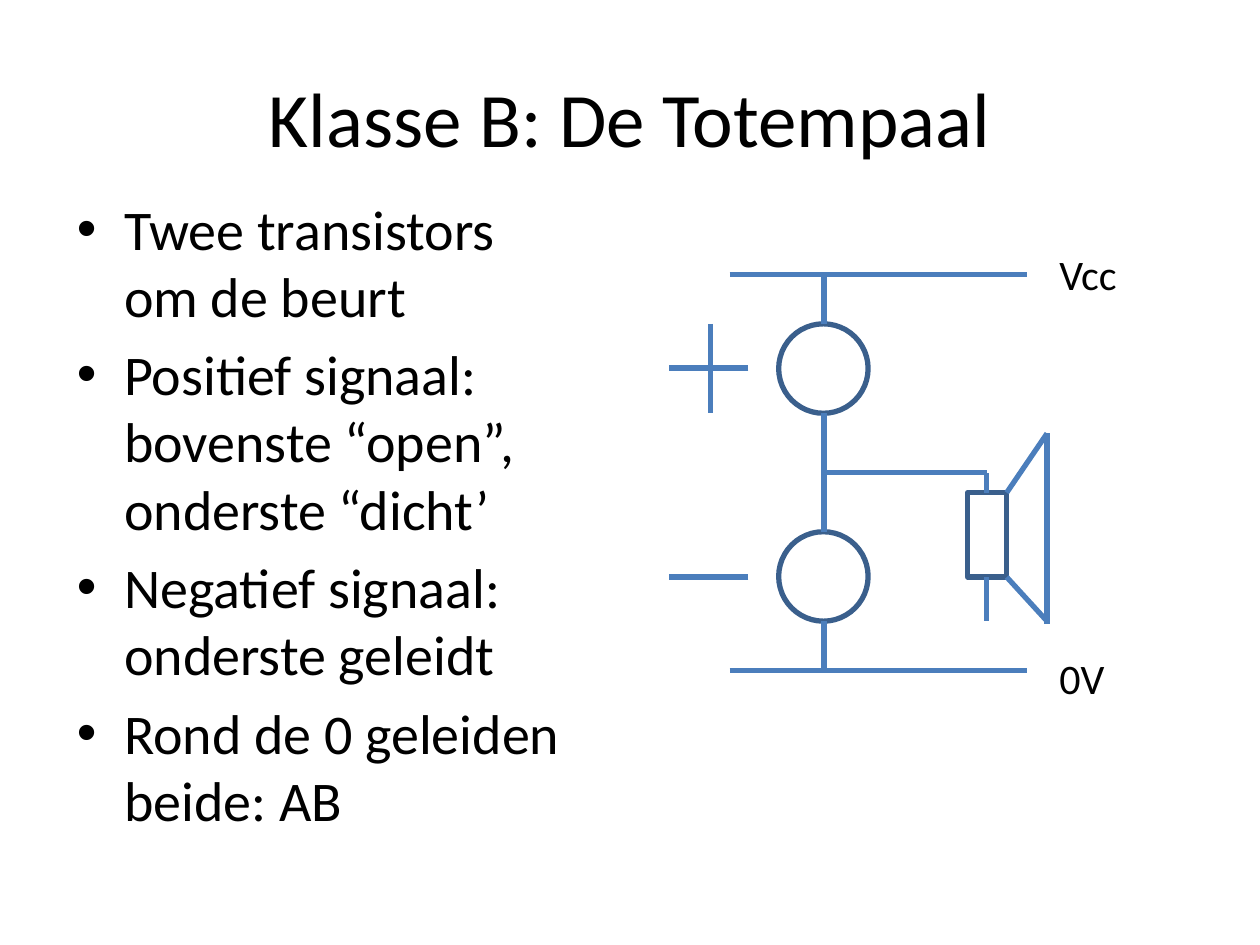
from typing import NamedTuple

from lxml.etree import SubElement
from pptx import Presentation
from pptx.dml.color import RGBColor as RGB
from pptx.enum.shapes import MSO_CONNECTOR as Conn, MSO_SHAPE as Kind
from pptx.enum.text import MSO_ANCHOR as Anchor, MSO_AUTO_SIZE as Auto, PP_ALIGN as Align
from pptx.oxml.ns import qn
from pptx.util import Inches, Pt

FONT = "Calibri"
COLORS = {"text": "000000", "wire": "4B7EBC", "part": "3A5F8C"}


class Wire(NamedTuple):
    x1: float
    y1: float
    x2: float
    y2: float


class Part(NamedTuple):
    kind: Kind
    left: float
    top: float
    width: float
    height: float


class Label(NamedTuple):
    text: str
    top: float


def color(name: str) -> RGB:
    return RGB.from_string(COLORS[name])


def place(shape, left: float, top: float, width: float, height: float) -> None:
    shape.left, shape.top = Inches(left), Inches(top)
    shape.width, shape.height = Inches(width), Inches(height)


def write(para, text: str, size: int) -> None:
    for i, line in enumerate(text.split("\n")):
        if i:
            para.add_line_break()
        run = para.add_run()
        run.text = line
        run.font.name, run.font.size = FONT, Pt(size)
        run.font.color.rgb = color("text")


def draw_wire(shapes, wire: Wire) -> None:
    line = shapes.add_connector(Conn.STRAIGHT, *map(Inches, wire))
    line.line.color.rgb = color("wire")
    line.line.width = Pt(3)
    SubElement(line._element.spPr, qn("a:effectLst"))


def draw_part(shapes, part: Part) -> None:
    shape = shapes.add_shape(part.kind, *map(Inches, part[1:]))
    shape.shadow.inherit = False
    shape.fill.background()
    shape.line.color.rgb = color("part")
    shape.line.width = Pt(3)


def draw_label(shapes, label: Label) -> None:
    box = shapes.add_textbox(*map(Inches, (8.31, label.top, 0.79, 0.5)))
    box.text_frame.word_wrap = True
    write(box.text_frame.paragraphs[0], label.text, 24)


# Circuit levels: supply rails, transistors, output node and speaker
VCC, GND = 2.18, 5.32
MID, AXIS = 3.75, 6.54
DIA = 0.71
TOP, LOW = 2.57, 4.22
COIL = Part(Kind.RECTANGLE, 7.68, 3.91, 0.31, 0.67)
SIDE, PIN, CONE = 7.99, 7.83, 8.31
BASE, FOOT = 4.58, 4.93

PARTS = [Part(Kind.OVAL, 6.18, y, DIA, DIA) for y in (TOP, LOW)] + [COIL]
WIRES = [
    # Supply rails
    *(Wire(5.79, y, 8.15, y) for y in (VCC, GND)),
    # Totem pole
    Wire(AXIS, VCC, AXIS, TOP),
    Wire(AXIS, TOP + DIA, AXIS, LOW),
    Wire(AXIS, LOW + DIA, AXIS, GND),
    # Speaker cone
    Wire(SIDE, COIL.top, CONE, 3.44),
    Wire(CONE, 3.44, CONE, 4.95),
    Wire(SIDE, BASE, CONE, FOOT),
    # Speaker leads
    Wire(AXIS, MID, PIN, MID),
    Wire(PIN, COIL.top, PIN, MID),
    Wire(PIN, BASE, PIN, FOOT),
    # Plus and minus signs
    *(Wire(5.94, y, 5.31, y) for y in (2.92, BASE)),
    Wire(5.64, TOP, 5.64, TOP + DIA),
]
LABELS = [Label("0V", 5.13), Label("Vcc", 1.92)]
POINTS = [
    "Twee transistors \nom de beurt",
    "Positief signaal:\nbovenste “open”, \nonderste “dicht’",
    "Negatief signaal: \nonderste geleidt",
    "Rond de 0 geleiden beide: AB",
]


def main() -> None:
    deck = Presentation()
    deck.slide_width, deck.slide_height = Inches(10), Inches(7.5)
    slide = deck.slides.add_slide(deck.slide_layouts[1])
    shapes = slide.shapes

    # Title
    title = shapes.title
    place(title, 0.5, 0.3, 9, 1.25)
    title.text_frame.vertical_anchor = Anchor.MIDDLE
    head = title.text_frame.paragraphs[0]
    head.alignment = Align.CENTER
    write(head, "Klasse B: De Totempaal", 44)

    # Bullet list
    body = slide.placeholders[1]
    place(body, 0.51, 1.49, 4.65, 5.71)
    frame = body.text_frame
    frame.auto_size = Auto.NONE
    for i, point in enumerate(POINTS):
        para = frame.add_paragraph() if i else frame.paragraphs[0]
        write(para, point, 32)

    # Circuit diagram
    for part in PARTS:
        draw_part(shapes, part)
    for wire in WIRES:
        draw_wire(shapes, wire)
    for label in LABELS:
        draw_label(shapes, label)

    deck.save("out.pptx")


if __name__ == "__main__":
    main()
